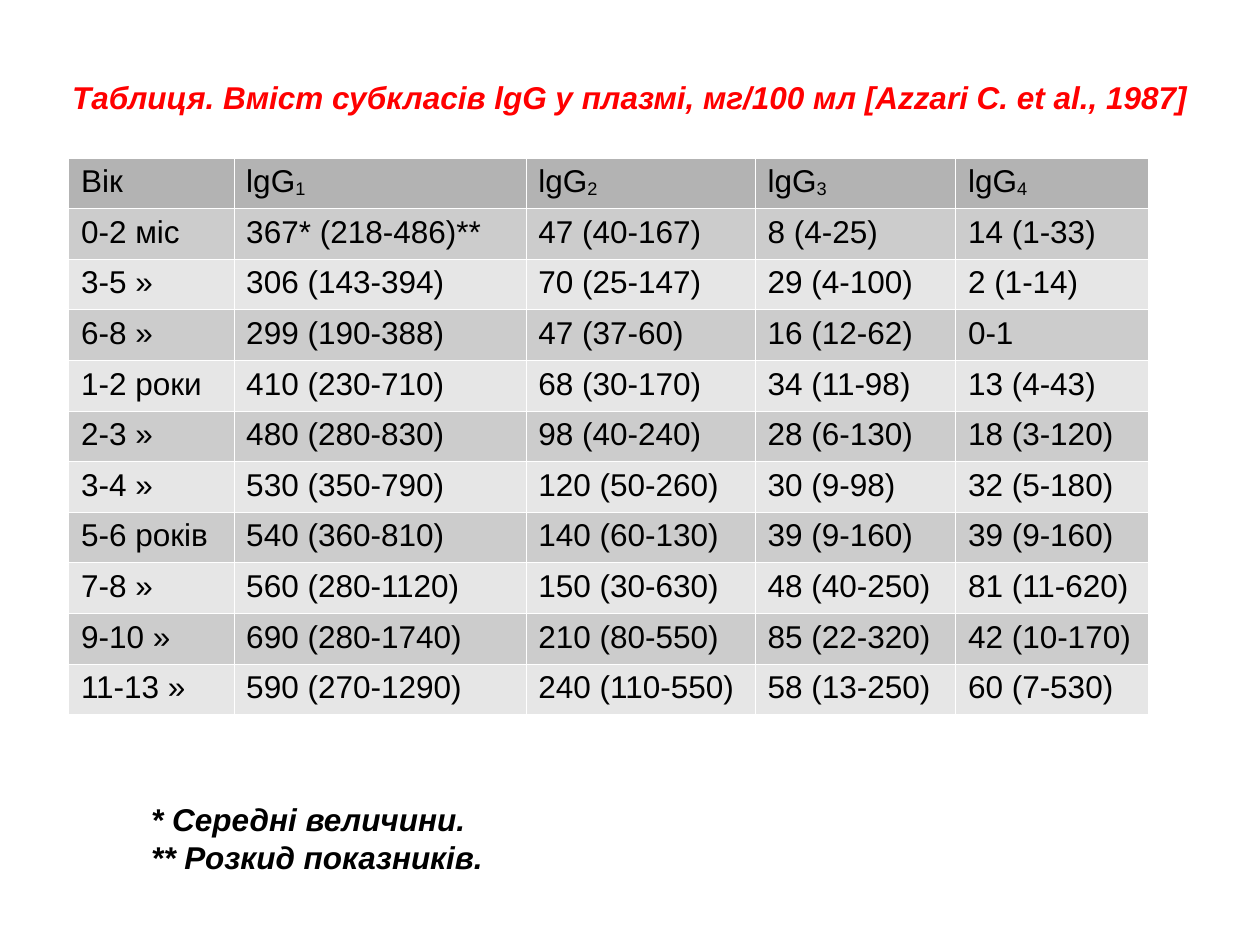
from lxml import etree
from pptx import Presentation
from pptx.dml.color import RGBColor
from pptx.enum.text import MSO_ANCHOR, MSO_AUTO_SIZE, PP_ALIGN
from pptx.oxml.ns import qn
from pptx.util import Cm, Pt

TOP = MSO_ANCHOR.TOP
GROW = MSO_AUTO_SIZE.SHAPE_TO_FIT_TEXT
LEFT = PP_ALIGN.LEFT
JUST = PP_ALIGN.JUSTIFY

TITLE = "Таблиця. Вміст субкласів lgG у плазмі, мг/100 мл [Azzari C. et al., 1987]"
NOTES = ["* Середні величини.", "** Розкид показників."]
HEAD = ["Вік", "lgG_1", "lgG_2", "lgG_3", "lgG_4"]
ROWS = [
    ["0-2 міс", "367* (218-486)**", "47 (40-167)", "8 (4-25)", "14 (1-33)"],
    ["3-5 »", "306 (143-394)", "70 (25-147)", "29 (4-100)", "2 (1-14)"],
    ["6-8 »", "299 (190-388)", "47 (37-60)", "16 (12-62)", "0-1"],
    ["1-2 роки", "410 (230-710)", "68 (30-170)", "34 (11-98)", "13 (4-43)"],
    ["2-3 »", "480 (280-830)", "98 (40-240)", "28 (6-130)", "18 (3-120)"],
    ["3-4 »", "530 (350-790)", "120 (50-260)", "30 (9-98)", "32 (5-180)"],
    ["5-6 років", "540 (360-810)", "140 (60-130)", "39 (9-160)", "39 (9-160)"],
    ["7-8 »", "560 (280-1120)", "150 (30-630)", "48 (40-250)", "81 (11-620)"],
    ["9-10 »", "690 (280-1740)", "210 (80-550)", "85 (22-320)", "42 (10-170)"],
    ["11-13 »", "590 (270-1290)", "240 (110-550)", "58 (13-250)", "60 (7-530)"],
]
WIDTHS = [3.33, 5.89, 4.62, 4.04, 3.89]


def color(code):
    return RGBColor.from_string(code)


class Page:
    base = {"name": "Arial", "size": Pt(18), "bold": False, "italic": False}
    strong = {"bold": True, "italic": True}
    fills = ["CCCCCC", "E6E6E6"]
    top_fill = "B3B3B3"
    line = "FFFFFF"

    def __init__(self, deck):
        self.slide = deck.slides.add_slide(deck.slide_layouts[5])

    def run(self, para, text, ink="000000", **look):
        run = para.add_run()
        run.text = text
        for key, value in {**self.base, **look}.items():
            setattr(run.font, key, value)
        run.font.color.rgb = color(ink)
        return run

    def fill_text(self, shape, lines, ink):
        frame = shape.text_frame
        traits = {"word_wrap": True, "auto_size": GROW, "vertical_anchor": TOP}
        for key, value in traits.items():
            setattr(frame, key, value)
        for i, text in enumerate(lines):
            para = frame.add_paragraph() if i else frame.paragraphs[0]
            para.alignment = JUST
            self.run(para, text, ink, **self.strong)

    def title(self, text, ink, **place):
        shape = self.slide.shapes.title
        for key, value in place.items():
            setattr(shape, key, Cm(value))
        self.fill_text(shape, [text], ink)

    def note(self, lines, *place):
        box = self.slide.shapes.add_textbox(*map(Cm, place))
        self.fill_text(box, lines, "000000")

    def edge(self, cell):
        props = cell._tc.get_or_add_tcPr()
        for i, side in enumerate(["lnL", "lnR", "lnT", "lnB"]):
            line = etree.Element(qn(f"a:{side}"), w=str(Pt(0.06)))
            fill = etree.SubElement(line, qn("a:solidFill"))
            etree.SubElement(fill, qn("a:srgbClr"), val=self.line)
            props.insert(i, line)

    def cell(self, cell, text, fill):
        cell.fill.solid()
        cell.fill.fore_color.rgb = color(fill)
        self.edge(cell)
        para = cell.text_frame.paragraphs[0]
        main, _, sub = text.partition("_")
        para.alignment = JUST if sub else LEFT
        self.run(para, main)
        if sub:
            low = self.run(para, sub)
            low.font._element.set("baseline", "-9000")

    def table(self, head, rows, widths, left, top, step):
        data = [head] + rows
        size = map(Cm, (left, top, sum(widths), step * len(data)))
        grid = self.slide.shapes.add_table(len(data), len(head), *size).table
        grid.first_row = grid.horz_banding = False
        for col, width in zip(grid.columns, widths):
            col.width = Cm(width)
        for r, row in enumerate(data):
            grid.rows[r].height = Cm(step)
            fill = self.fills[(r - 1) % 2] if r else self.top_fill
            for c, text in enumerate(row):
                self.cell(grid.cell(r, c), text, fill)


def main():
    deck = Presentation()
    deck.slide_width, deck.slide_height = Cm(25.4), Cm(19.05)
    page = Page(deck)
    page.title(TITLE, "FF0000", left=1.2, top=1.45, width=23.05, height=1.02)
    page.table(HEAD, ROWS, WIDTHS, 1.38, 3.18, 1.02)
    page.note(NOTES, 2.8, 16, 7.22, 1.78)
    deck.save("out.pptx")


if __name__ == "__main__":
    main()
